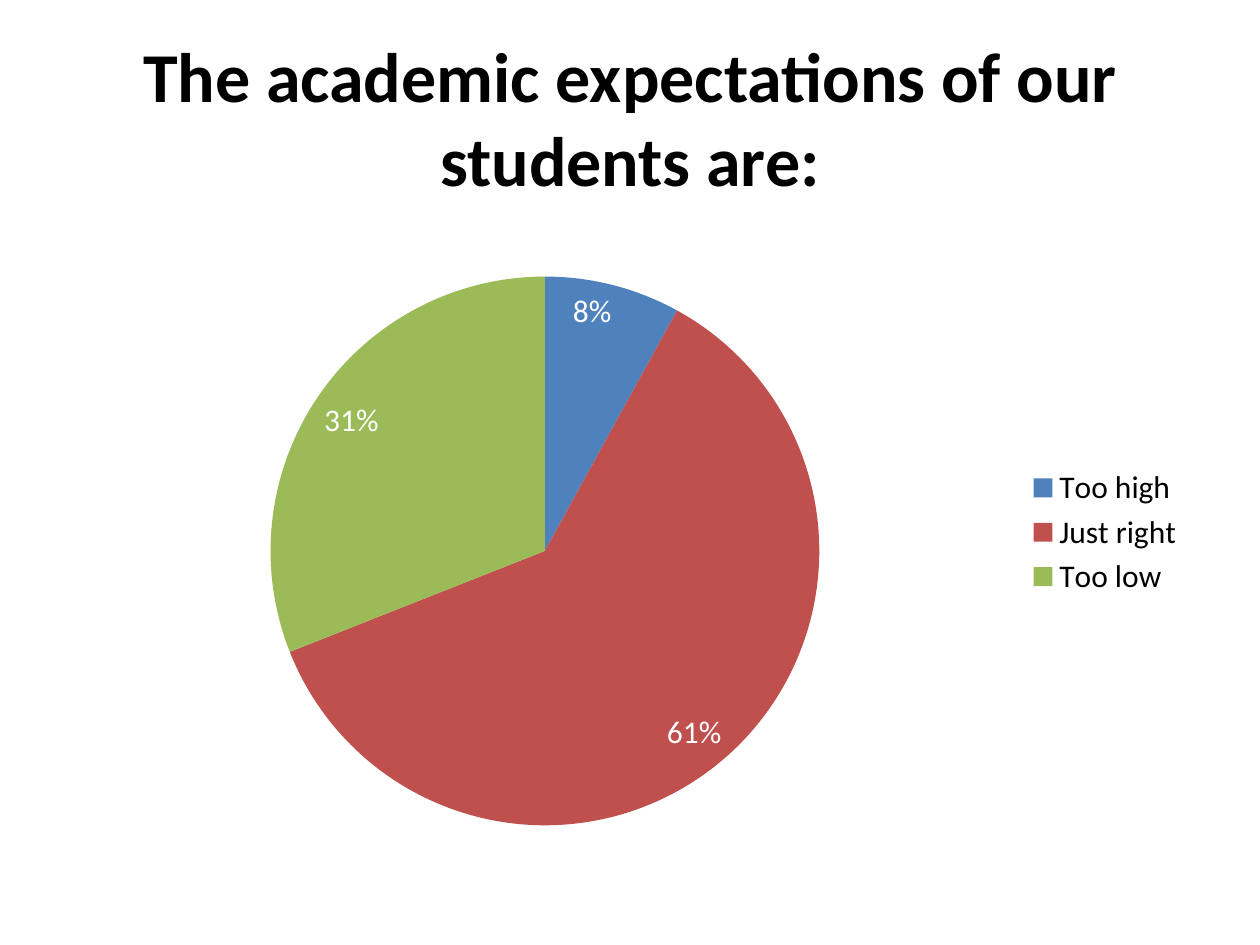
from lxml import etree
from pptx import Presentation
from pptx.chart.data import CategoryChartData
from pptx.dml.color import RGBColor
from pptx.enum.chart import XL_CHART_TYPE, XL_LABEL_POSITION, XL_LEGEND_POSITION
from pptx.enum.text import MSO_ANCHOR, PP_ALIGN
from pptx.oxml.ns import qn
from pptx.util import Inches, Pt

PIE = XL_CHART_TYPE.PIE
INSIDE_END = XL_LABEL_POSITION.INSIDE_END
RIGHT = XL_LEGEND_POSITION.RIGHT
MIDDLE = MSO_ANCHOR.MIDDLE
CENTER = PP_ALIGN.CENTER
TITLE_ONLY = 5

FONT = "Calibri"
BLACK = "000000"
WHITE = "FFFFFF"
ANSWERS = [
    ("Too high", 0.08, "4F81BD"),
    ("Just right", 0.61, "C0504D"),
    ("Too low", 0.31, "9BBB59"),
]
PLOT_LAYOUT = {"x": 0.18, "y": 0.09, "w": 0.49, "h": 0.88}


def color(value):
    return RGBColor.from_string(value)


def style_font(font, size, value, bold=False):
    font.name = FONT
    font.size = Pt(size)
    font.bold = bold
    font.color.rgb = color(value)


def set_title(slide, text):
    title = slide.shapes.title
    title.left, title.top = Inches(0), Inches(0.3)
    title.width, title.height = Inches(10), Inches(1.25)
    frame = title.text_frame
    frame.text = text
    frame.word_wrap = True
    frame.vertical_anchor = MIDDLE
    para = frame.paragraphs[0]
    para.alignment = CENTER
    style_font(para.runs[0].font, 40, BLACK, bold=True)


def place_plot(chart):
    plot_area = chart.plots[0]._element.getparent()
    layout = plot_area.find(qn("c:layout"))
    if layout is None:
        layout = etree.Element(qn("c:layout"))
        plot_area.insert(0, layout)
    manual = etree.SubElement(layout, qn("c:manualLayout"))
    settings = {"layoutTarget": "inner", "xMode": "edge", "yMode": "edge", **PLOT_LAYOUT}
    for name, value in settings.items():
        etree.SubElement(manual, qn(f"c:{name}")).set("val", str(value))


def add_answer_pie(slide):
    data = CategoryChartData(number_format="0%")
    data.categories = [name for name, _, _ in ANSWERS]
    data.add_series("Series 1", [share for _, share, _ in ANSWERS])
    chart = slide.shapes.add_chart(
        PIE, Inches(0.5), Inches(1.75), Inches(9), Inches(4.95), data
    ).chart
    style_font(chart.font, 18, BLACK)
    chart.has_title = False
    chart.has_legend = True
    chart.legend.position = RIGHT
    chart.legend.include_in_layout = False

    plot = chart.plots[0]
    plot.vary_by_categories = True
    for index, (_, _, fill) in enumerate(ANSWERS):
        point = plot.series[0].points[index]
        point.format.fill.solid()
        point.format.fill.fore_color.rgb = color(fill)

    plot.has_data_labels = True
    labels = plot.data_labels
    labels.show_value = True
    labels.show_percentage = False
    labels.number_format = "0%"
    labels.number_format_is_linked = False
    labels.position = INSIDE_END
    style_font(labels.font, 18, WHITE)
    place_plot(chart)


def main():
    deck = Presentation()
    deck.slide_width = Inches(10)
    deck.slide_height = Inches(7.5)
    slide = deck.slides.add_slide(deck.slide_layouts[TITLE_ONLY])
    slide.background.fill.solid()
    slide.background.fill.fore_color.rgb = color(WHITE)
    set_title(slide, "The academic expectations of our students are:")
    add_answer_pie(slide)
    deck.save("out.pptx")


if __name__ == "__main__":
    main()
